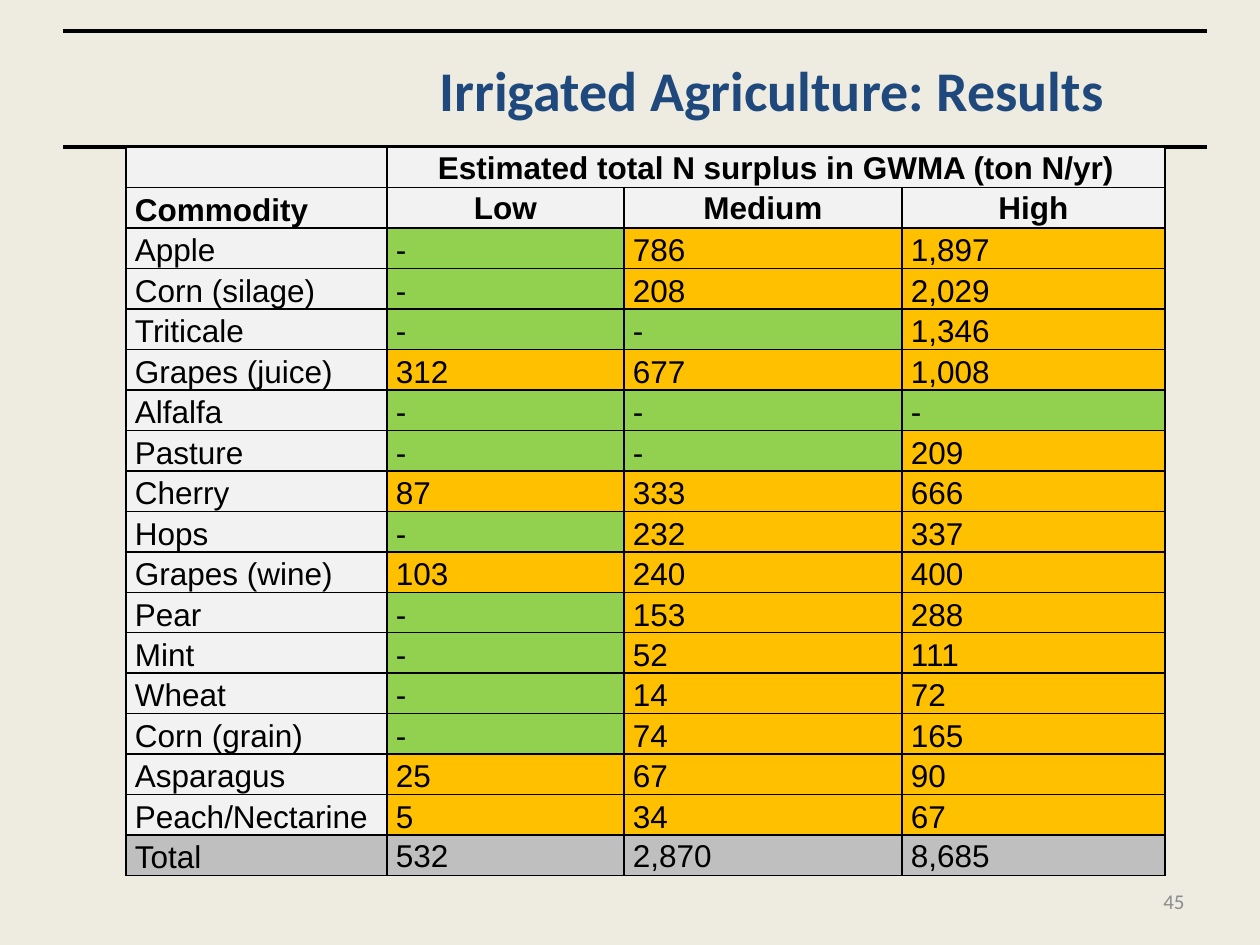
import pptx
import pptx.dml.color
import pptx.enum.shapes
import pptx.enum.text
import pptx.oxml
import pptx.oxml.ns
import pptx.util
from lxml import etree

ALIGN = pptx.enum.text.PP_ALIGN
ANCHOR = pptx.enum.text.MSO_ANCHOR
SCALE = 914400 / 126

HEAD = ["Commodity", "Low", "Medium", "High"]
CROPS = [
    ["Apple", "-", "786", "1,897"],
    ["Corn (silage)", "-", "208", "2,029"],
    ["Triticale", "-", "-", "1,346"],
    ["Grapes (juice)", "312", "677", "1,008"],
    ["Alfalfa", "-", "-", "-"],
    ["Pasture", "-", "-", "209"],
    ["Cherry", "87", "333", "666"],
    ["Hops", "-", "232", "337"],
    ["Grapes (wine)", "103", "240", "400"],
    ["Pear", "-", "153", "288"],
    ["Mint", "-", "52", "111"],
    ["Wheat", "-", "14", "72"],
    ["Corn (grain)", "-", "74", "165"],
    ["Asparagus", "25", "67", "90"],
    ["Peach/Nectarine", "5", "34", "67"],
]
TOTAL = ["Total", "532", "2,870", "8,685"]
TABS = [None, 71, 79, 86]


def px(n):
    return pptx.util.Emu(round(n * SCALE))


def color(code):
    return pptx.dml.color.RGBColor.from_string(code)


def child(parent, tag, **attrs):
    return etree.SubElement(parent, pptx.oxml.ns.qn(tag), attrs)


class Deck:
    """Holds the style and the current slide."""

    ink, pale, gray = "000000", "F2F2F2", "BFBFBF"
    none, some = "92D050", "FFC000"

    def __init__(self):
        self.file = pptx.Presentation()
        self.file.slide_width, self.file.slide_height = px(1260), px(945)
        self.slide = self.file.slides.add_slide(self.file.slide_layouts[6])
        fill = self.slide.background.fill
        fill.solid()
        fill.fore_color.rgb = color("EEECE1")

    def style(self, para, face, size, code, bold=False):
        font = para.font
        font.name, font.size, font.bold = face, pptx.util.Pt(size), bold
        font.color.rgb = color(code)

    def rule(self, y):
        """Draw a line across the slide."""
        line = self.slide.shapes.add_connector(
            pptx.enum.shapes.MSO_CONNECTOR.STRAIGHT, px(63), px(y), px(1207), px(y))
        line.line.color.rgb = color(self.ink)
        line.line.width = pptx.util.Pt(2)
        child(line.element.spPr, "a:effectLst")

    def text(self, box, words, size, code, align, bold=False):
        frame = self.slide.shapes.add_textbox(*map(px, box)).text_frame
        frame.word_wrap = True
        frame.vertical_anchor = ANCHOR.MIDDLE
        para = frame.paragraphs[0]
        para.text, para.alignment = words, align
        self.style(para, "Calibri", size, code, bold)

    def cell(self, cell, words, fill, anchor, align=ALIGN.LEFT, tab=None, bold=False):
        cell.margin_left = cell.margin_right = px(9)
        cell.margin_top = cell.margin_bottom = 0
        cell.vertical_anchor = anchor
        props = cell._tc.get_or_add_tcPr()
        for side in "LRTB":
            edge = child(props, "a:ln" + side, w="12700")
            child(child(edge, "a:solidFill"), "a:srgbClr", val=self.ink)
        cell.fill.solid()
        cell.fill.fore_color.rgb = color(fill)
        para = cell.text_frame.paragraphs[0]
        para.text, para.alignment, para.line_spacing = words, align, 1.07
        if tab:
            tabs = child(para._p.get_or_add_pPr(), "a:tabLst")
            child(tabs, "a:tab", pos=str(px(tab)), algn="dec")
        self.style(para, "Arial", 18, self.ink, bold)

    def table(self, x, y, cols, high):
        rows = [["", "Estimated total N surplus in GWMA (ton N/yr)", "", ""],
                HEAD, *CROPS, TOTAL]
        frame = self.slide.shapes.add_table(
            len(rows), len(cols), px(x), px(y), px(sum(cols)), px(high * len(rows)))
        grid = frame.table
        grid.first_row = grid.horz_banding = False
        for col, wide in zip(grid.columns, cols):
            col.width = px(wide)
        for r, row in enumerate(rows):
            head, last = r < 2, row is TOTAL
            for c, words in enumerate(row):
                if last:
                    fill = self.gray
                elif head or c == 0:
                    fill = self.pale
                else:
                    fill = self.none if words == "-" else self.some
                middle = c > 0 and (head or last)
                self.cell(grid.cell(r, c), words, fill,
                          ANCHOR.MIDDLE if middle else ANCHOR.BOTTOM,
                          ALIGN.CENTER if head and c else ALIGN.LEFT,
                          None if head else TABS[c], head)
        grid.cell(0, 1).merge(grid.cell(0, 3))


def main():
    deck = Deck()
    for y in (147, 31):
        deck.rule(y)
    deck.text((336, 31, 872, 116), "Irrigated Agriculture: Results",
              32, "1F497D", ALIGN.CENTER, True)
    deck.table(126, 147, [261, 237, 278, 263], 37)
    deck.text((903, 876, 294, 50), "45", 12, "8C8C8C", ALIGN.RIGHT)
    deck.file.save("out.pptx")


if __name__ == "__main__":
    main()
